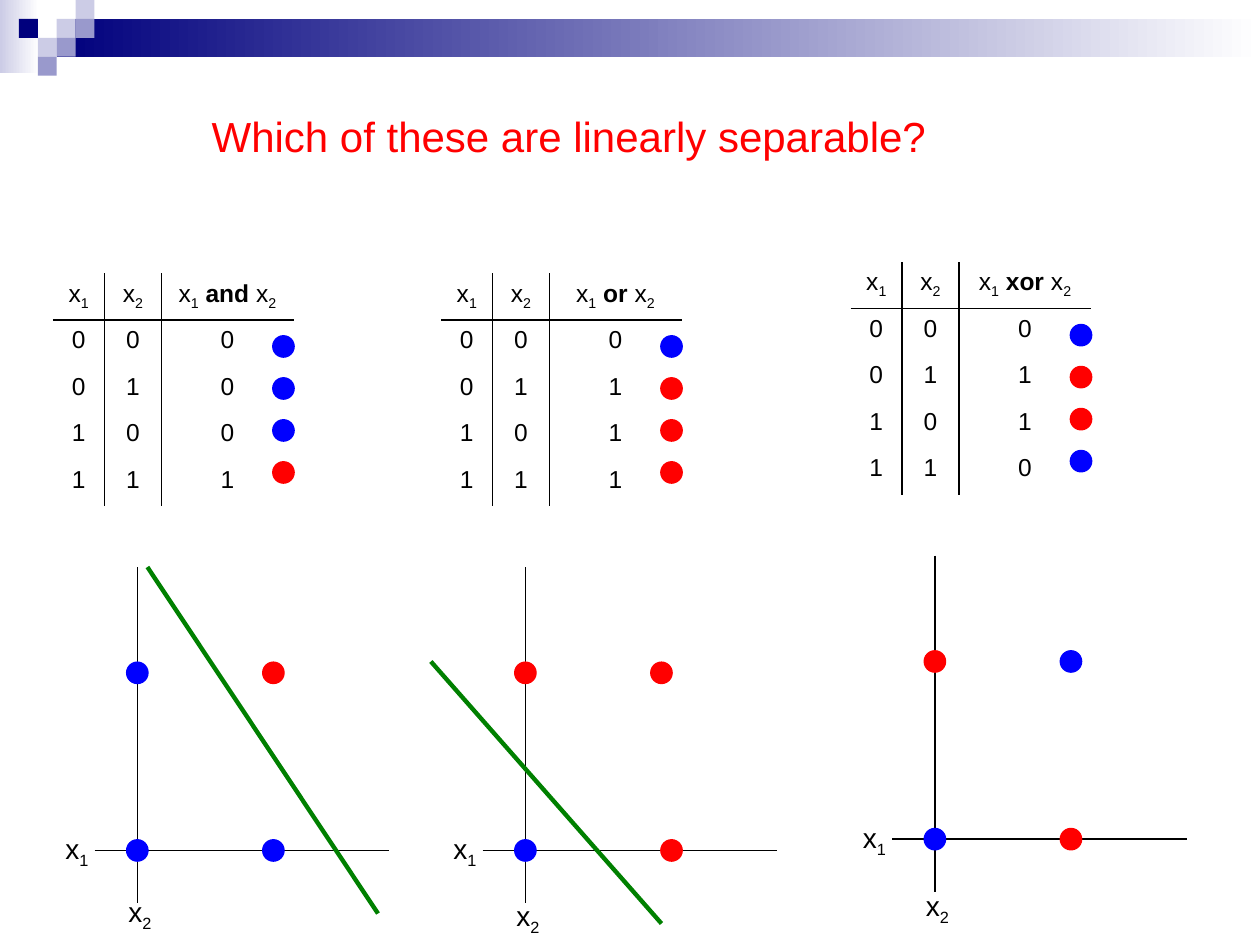
"""Build a slide asking which Boolean functions are linearly separable."""
from lxml import etree
from pptx import Presentation, util as u
from pptx.dml.color import RGBColor
from pptx.enum import shapes, text
from pptx.oxml.ns import qn

THEME = {
    "font": "Arial", "title_size": 24, "cell_size": 14, "label_size": 16,
    "black": "000000", "red": "FF0000", "blue": "0000FF", "green": "008000",
    "navy": "00007D", "lilac": "CCCCE6", "violet": "9999CC", "white": "FFFFFF",
    "axis": 0.75, "border": 1, "divider": 2.5,
}
TITLE = "Which of these are linearly separable?"
INPUTS = [(0, 0), (0, 1), (1, 0), (1, 1)]
PANELS = [
    {"name": "and", "at": (0.42, 2.17), "out": [0, 0, 0, 1], "x2_top": 4.88,
     "right": 1.75, "divider": (1.17, 4.5, 3, 7.25)},
    {"name": "or", "at": (3.5, 2.17), "out": [0, 1, 1, 1], "x2_top": 4.91,
     "right": 1.83, "divider": (3.42, 5.25, 5.25, 7.33)},
    {"name": "xor", "at": (6.75, 2.08), "out": [0, 1, 1, 0], "x2_top": 4.92,
     "right": 1.75, "divider": None},
]
BANDS = [((0, 0, 0.31, 0.58), "lilac"), ((0.45, 0.15, 9.55, 0.3), "navy")]
SQUARE = 0.15
SQUARES = [(3, 1, "lilac"), (4, 0, "lilac"), (4, 1, "violet"), (2, 2, "lilac"),
           (1, 1, "navy"), (3, 2, "violet"), (2, 3, "violet")]
COLS = [0.41, 0.45, 1.05]
ROW = 0.37
TABLE_HEIGHT = 1.83
DOT = 0.17
AXIS_X, AXIS_Y, UPPER_Y, RIGHT_X = 0.67, 4.58, 3.17, 1.75
KEY_X, KEY_Y, KEY_STEP = 1.83, 0.58, 1 / 3


def rgb(name):
    return RGBColor.from_string(THEME[name])


def variable(n):
    return [("x", ""), (str(n), "sub")]


def write(p, runs, size):
    for value, style in runs:
        r = p.add_run()
        r.text = value
        r.font.name, r.font.size = THEME["font"], u.Pt(THEME[size])
        r.font.color.rgb = rgb("black")
        if style == "bold":
            r.font.bold = True
        if style == "sub":
            r.font._element.set("baseline", "-25000")


def add_shape(s, kind, box, color, outline=False):
    sp = s.shapes.add_shape(kind, *map(u.Inches, box))
    sp.shadow.inherit = False
    sp.fill.solid()
    sp.fill.fore_color.rgb = rgb(color)
    if outline:
        sp.line.color.rgb = rgb(color)
        sp.line.width = u.Pt(THEME["axis"])
    else:
        sp.line.fill.background()
    return sp


def add_dot(s, x, y, value):
    box = (x - DOT / 2, y - DOT / 2, DOT, DOT)
    add_shape(s, shapes.MSO_SHAPE.OVAL, box, "red" if value else "blue", True)


def add_line(s, ends, color, width):
    line = s.shapes.add_connector(shapes.MSO_CONNECTOR.STRAIGHT, *map(u.Inches, ends))
    line.line.color.rgb = rgb(color)
    line.line.width = u.Pt(THEME[width])
    etree.SubElement(line._element.spPr, qn("a:effectLst"))


def add_label(s, x, y, runs):
    tf = s.shapes.add_textbox(*map(u.Inches, (x, y, 0.5, 0.37))).text_frame
    tf.word_wrap = True
    tf.auto_size = text.MSO_AUTO_SIZE.SHAPE_TO_FIT_TEXT
    write(tf.paragraphs[0], runs, "label_size")


def set_borders(cell, visible):
    tc_pr = cell._tc.get_or_add_tcPr()
    for i, side in enumerate("LRTB"):
        ln = etree.Element(qn(f"a:ln{side}"), w=str(u.Pt(THEME["border"])))
        if side in visible:
            fill = etree.SubElement(ln, qn("a:solidFill"))
            etree.SubElement(fill, qn("a:srgbClr"), val=THEME["black"])
        else:
            etree.SubElement(ln, qn("a:noFill"))
        tc_pr.insert(i, ln)


def add_truth_table(s, panel):
    x, y = panel["at"]
    header = [variable(1), variable(2),
              variable(1) + [(f" {panel['name']} ", "bold")] + variable(2)]
    rows = [header] + [[[(str(v), "")] for v in (*pair, out)]
                       for pair, out in zip(INPUTS, panel["out"])]
    box = map(u.Inches, (x, y, sum(COLS), TABLE_HEIGHT))
    table = s.shapes.add_table(len(rows), len(COLS), *box).table
    table.first_row = table.horz_banding = False
    for col, width in zip(table.columns, COLS):
        col.width = u.Inches(width)
    for i, row in enumerate(rows):
        table.rows[i].height = u.Inches(ROW)
        for j, runs in enumerate(row):
            cell = table.cell(i, j)
            cell.fill.background()
            p = cell.text_frame.paragraphs[0]
            p.alignment = text.PP_ALIGN.CENTER
            write(p, runs, "cell_size")
            set_borders(cell, ("R", "LR", "L")[j] + {0: "B", 1: "T"}.get(i, ""))


def add_plot(s, panel):
    x, y = panel["at"]
    add_line(s, (x + AXIS_X, y + 2.33, x + AXIS_X, y + 5), "black", "axis")
    add_line(s, (x + 0.33, y + AXIS_Y, x + 2.67, y + AXIS_Y), "black", "axis")
    for i, ((x1, x2), out) in enumerate(zip(INPUTS, panel["out"])):
        right = RIGHT_X if x2 else panel["right"]
        add_dot(s, x + (right if x1 else AXIS_X), y + (UPPER_Y if x2 else AXIS_Y), out)
        add_dot(s, x + KEY_X, y + KEY_Y + i * KEY_STEP, out)
    add_label(s, x, y + 4.38, variable(1))
    add_label(s, x + 0.5, y + panel["x2_top"], variable(2))
    if panel["divider"]:
        add_line(s, panel["divider"], "green", "divider")


def add_banner(s):
    for box, color in BANDS:
        fill = add_shape(s, shapes.MSO_SHAPE.RECTANGLE, box, color).fill
        fill.gradient()
        fill.gradient_angle = 0
        for stop, position, shade in zip(fill.gradient_stops, (0, 1), (color, "white")):
            stop.position = position
            stop.color.rgb = rgb(shade)
    for col, row, color in SQUARES:
        box = (col * SQUARE, row * SQUARE, SQUARE, SQUARE)
        add_shape(s, shapes.MSO_SHAPE.RECTANGLE, box, color)


def add_title(s):
    sp = s.shapes.title
    sp.left, sp.top, sp.width, sp.height = map(u.Inches, (1.58, 0.83, 5.93, 0.5))
    tf = sp.text_frame
    tf.text = TITLE
    tf.word_wrap = False
    tf.auto_size = text.MSO_AUTO_SIZE.SHAPE_TO_FIT_TEXT
    tf.vertical_anchor = text.MSO_ANCHOR.TOP
    p = tf.paragraphs[0]
    p.alignment = text.PP_ALIGN.LEFT
    font = p.runs[0].font
    font.name, font.size = THEME["font"], u.Pt(THEME["title_size"])
    font.color.rgb = rgb("red")


def main():
    prs = Presentation()
    prs.slide_width, prs.slide_height = u.Inches(10), u.Inches(7.5)
    s = prs.slides.add_slide(prs.slide_layouts[5])
    add_title(s)
    add_banner(s)
    for panel in PANELS:
        add_truth_table(s, panel)
        add_plot(s, panel)
    prs.save("out.pptx")


if __name__ == "__main__":
    main()
